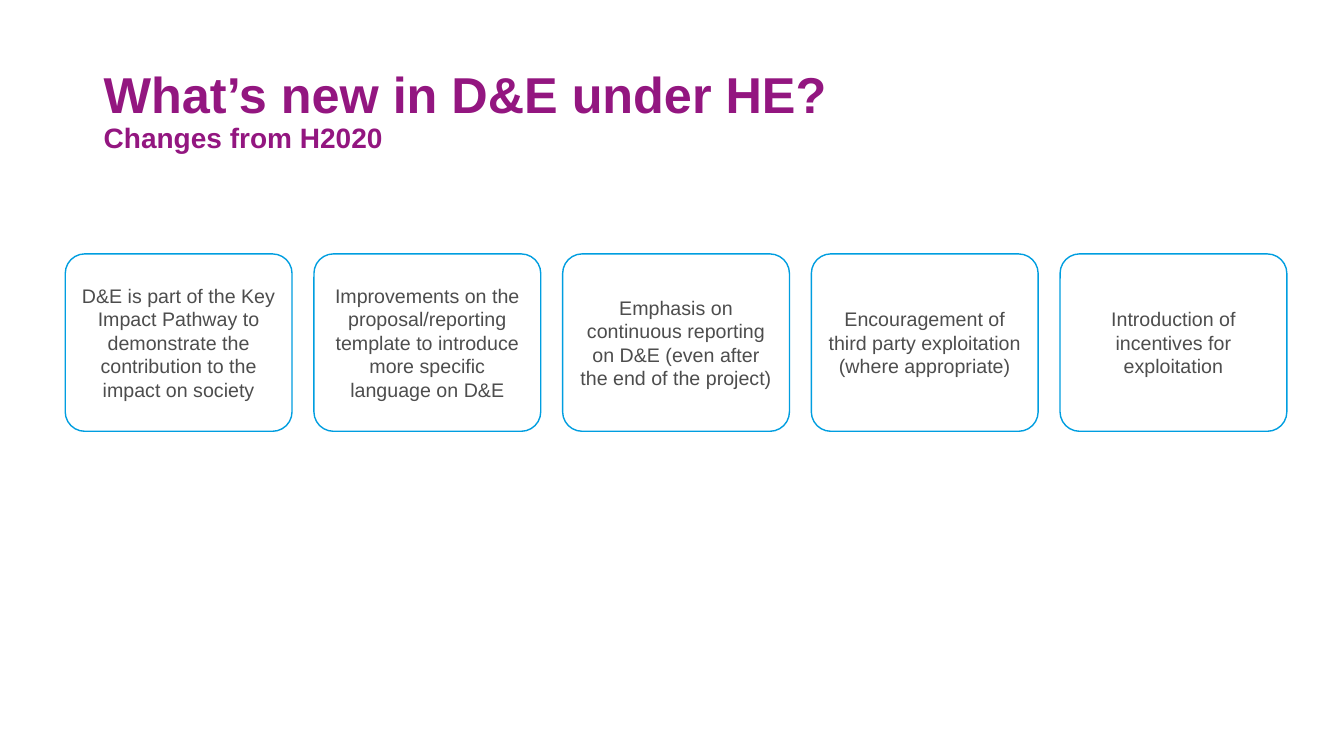
from pptx import Presentation
from pptx.dml.color import RGBColor
from pptx.enum import shapes, text
from pptx.util import Pt

PURPLE = RGBColor(0x93, 0x16, 0x80)
BLUE = RGBColor(0x00, 0x9E, 0xE0)
GREY = RGBColor(0x4D, 0x4D, 0x4D)
WHITE = RGBColor(0xFF, 0xFF, 0xFF)

CARD_LEFT, CARD_TOP, CARD_PITCH = 46.6, 181.4, 177.65
CARD_WIDTH, CARD_HEIGHT = 162, 126.7
CHANGES = [
    "D&E is part of the Key Impact Pathway to demonstrate the contribution to the impact on society",
    "Improvements on the proposal/reporting template to introduce more specific language on D&E",
    "Emphasis on continuous reporting on D&E (even after the end of the project)",
    "Encouragement of third party exploitation (where appropriate)",
    "Introduction of incentives for exploitation",
]


def style_run(r, size, color, bold=False):
    """Set the font of a run."""
    r.font.name = "Arial"
    r.font.size = Pt(size)
    r.font.bold = bold
    r.font.color.rgb = color


def add_title(s, title, subtitle):
    """Add the heading with its smaller second line."""
    box = s.shapes.add_textbox(Pt(67), Pt(45.4), Pt(828), Pt(64.8))
    tf = box.text_frame
    tf.word_wrap = True
    tf.vertical_anchor = text.MSO_ANCHOR.BOTTOM
    tf.margin_bottom = Pt(0)
    p = tf.paragraphs[0]
    p.line_spacing = 0.9
    p.text = title
    p.add_line_break()
    p.add_run().text = subtitle
    for r, size in zip(p.runs, (36, 20)):
        style_run(r, size, PURPLE, bold=True)


def add_card(s, left, change):
    """Add one outlined rounded card with centred text."""
    card = s.shapes.add_shape(shapes.MSO_SHAPE.ROUNDED_RECTANGLE, Pt(left),
                              Pt(CARD_TOP), Pt(CARD_WIDTH), Pt(CARD_HEIGHT))
    card.adjustments[0] = 0.11
    card.shadow.inherit = False
    card.fill.solid()
    card.fill.fore_color.rgb = WHITE
    card.line.color.rgb = BLUE
    card.line.width = Pt(1)
    tf = card.text_frame
    tf.word_wrap = True
    tf.vertical_anchor = text.MSO_ANCHOR.MIDDLE
    tf.text = change
    p = tf.paragraphs[0]
    p.alignment = text.PP_ALIGN.CENTER
    style_run(p.runs[0], 14, GREY)


def main():
    """Build and save the slide."""
    prs = Presentation()
    prs.slide_width, prs.slide_height = Pt(960), Pt(540)
    s = prs.slides.add_slide(prs.slide_layouts[6])
    add_title(s, "What’s new in D&E under HE?", "Changes from H2020")
    for i, change in enumerate(CHANGES):
        add_card(s, CARD_LEFT + i * CARD_PITCH, change)
    prs.save("out.pptx")


if __name__ == "__main__":
    main()
